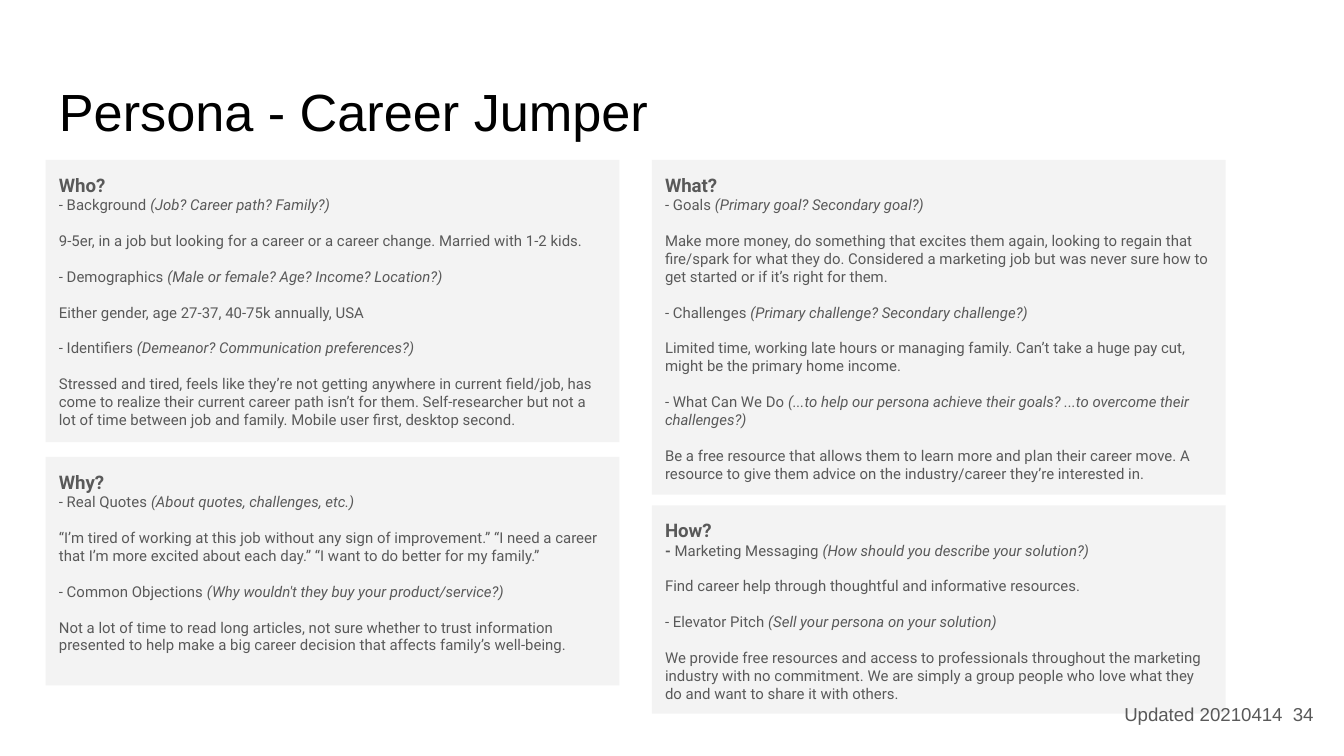
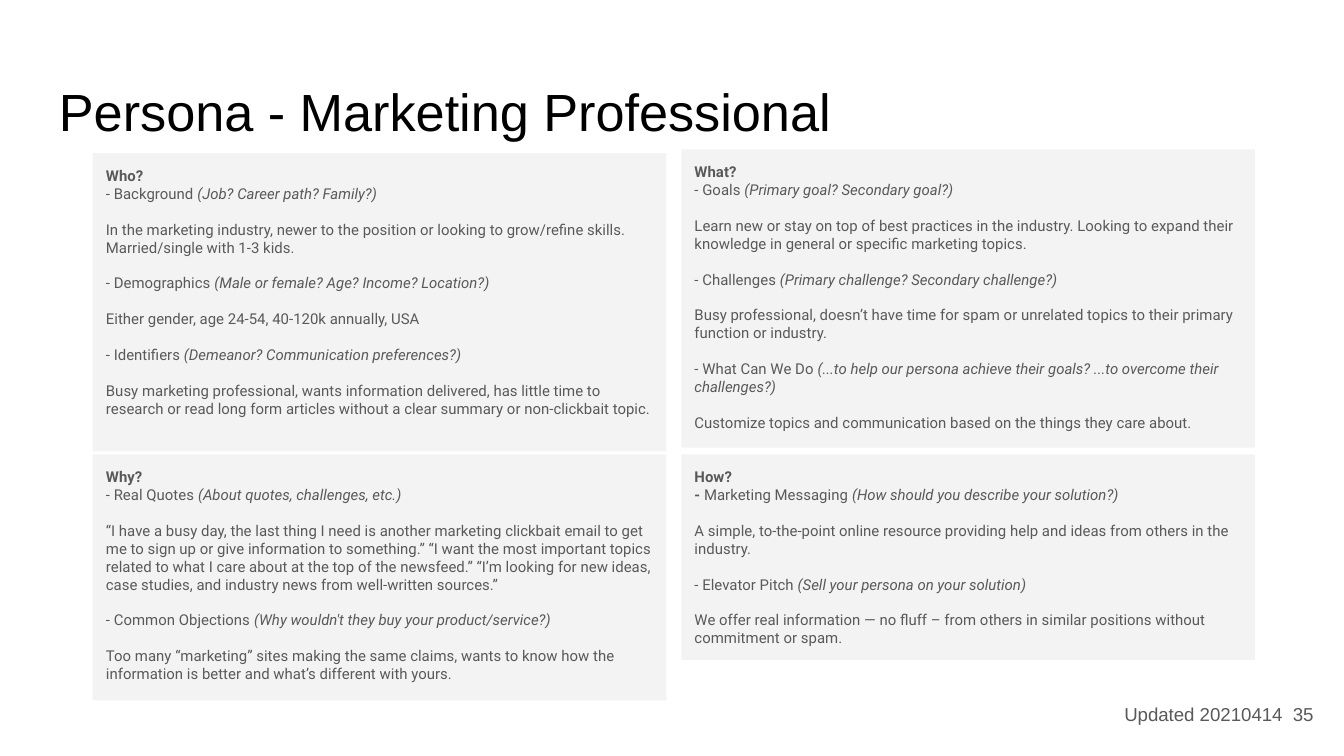
import pptx
import pptx.dml.color
import pptx.enum.shapes
import pptx.enum.text
import pptx.util

Pt = pptx.util.Pt
RGBColor = pptx.dml.color.RGBColor
ANCHOR = pptx.enum.text.MSO_ANCHOR
ALIGN = pptx.enum.text.PP_ALIGN

BLACK = RGBColor(0x00, 0x00, 0x00)
GRAY = RGBColor(0x59, 0x59, 0x59)
PANEL = RGBColor(0xF3, 0xF3, 0xF3)

TITLE_FONT = "Arial"
BODY_FONT = "Roboto"
BODY_SIZE = 8
LINE_GAP = 9.6
INSET = 7.2
PANEL_WIDTH = 307.4

# Questions asked of every persona: (label, hint) per panel
QUESTIONS = {
    "Who?": [
        ("Background", "(Job? Career path? Family?)"),
        ("Demographics", "(Male or female? Age? Income? Location?)"),
        ("Identifiers", "(Demeanor? Communication preferences?)"),
    ],
    "Why?": [
        ("Real Quotes", "(About quotes, challenges, etc.)"),
        ("Common Objections", "(Why wouldn't they buy your product/service?)"),
    ],
    "What?": [
        ("Goals", "(Primary goal? Secondary goal?)"),
        ("Challenges", "(Primary challenge? Secondary challenge?)"),
        ("What Can We Do", "(...to help our persona achieve their goals? "
                           "...to overcome their challenges?)"),
    ],
    "How?": [
        ("Marketing Messaging", "(How should you describe your solution?)"),
        ("Elevator Pitch", "(Sell your persona on your solution)"),
    ],
}

# Each panel: left, top, height and the answers to its questions
CAREER_JUMPER = {
    "Who?": (24.5, 85.7, 151.2, [
        "9-5er, in a job but looking for a career or a career change. "
        "Married with 1-2 kids.",
        "Either gender, age 27-37, 40-75k annually, USA",
        "Stressed and tired, feels like they’re not getting anywhere in current "
        "field/job, has come to realize their current career path isn’t for them. "
        "Self-researcher but not a lot of time between job and family. "
        "Mobile user first, desktop second.",
    ]),
    "Why?": (24.5, 244.8, 122.4, [
        "“I’m tired of working at this job without any sign of improvement.” "
        "“I need a career that I’m more excited about each day.” "
        "“I want to do better for my family.”",
        "Not a lot of time to read long articles, not sure whether to trust "
        "information presented to help make a big career decision that affects "
        "family’s well-being.",
    ]),
    "What?": (349.2, 85.7, 179.3, [
        "Make more money, do something that excites them again, looking to regain "
        "that fire/spark for what they do. Considered a marketing job but was "
        "never sure how to get started or if it’s right for them.",
        "Limited time, working late hours or managing family. Can’t take a huge "
        "pay cut, might be the primary home income.",
        "Be a free resource that allows them to learn more and plan their career "
        "move. A resource to give them advice on the industry/career they’re "
        "interested in.",
    ]),
    "How?": (349.2, 270.7, 111.6, [
        "Find career help through thoughtful and informative resources.",
        "We provide free resources and access to professionals throughout the "
        "marketing industry with no commitment. We are simply a group people who "
        "love what they do and want to share it with others.",
    ]),
}

MARKETING_PROFESSIONAL = {
    "Who?": (49.7, 82, 159.8, [
        "In the marketing industry, newer to the position or looking to "
        "grow/refine skills. Married/single with 1-3 kids.",
        "Either gender, age 24-54, 40-120k annually, USA",
        "Busy marketing professional, wants information delivered, has little "
        "time to research or read long form articles without a clear summary or "
        "non-clickbait topic.",
    ]),
    "Why?": (49.7, 243.4, 131.8, [
        "“I have a busy day, the last thing I need is another marketing clickbait "
        "email to get me to sign up or give information to something.” “I want "
        "the most important topics related to what I care about at the top of the "
        "newsfeed.” “I’m looking for new ideas, case studies, and industry news "
        "from well-written sources.”",
        "Too many “marketing” sites making the same claims, wants to know how the "
        "information is better and what’s different with yours.",
    ]),
    "What?": (365, 80, 159.8, [
        "Learn new or stay on top of best practices in the industry. Looking to "
        "expand their knowledge in general or specific marketing topics.",
        "Busy professional, doesn’t have time for spam or unrelated topics to "
        "their primary function or industry.",
        "Customize topics and communication based on the things they care about.",
    ]),
    "How?": (365, 243.4, 110.2, [
        "A simple, to-the-point online resource providing help and ideas from "
        "others in the industry.",
        "We offer real information — no fluff – from others in similar positions "
        "without commitment or spam.",
    ]),
}


def prepare_frame(sp, anchor=ANCHOR.TOP):
    tf = sp.text_frame
    tf.word_wrap = True
    tf.vertical_anchor = anchor
    tf.margin_left = tf.margin_right = Pt(INSET)
    tf.margin_top = tf.margin_bottom = Pt(INSET)
    return tf


def style_paragraph(p, size, font, color, align=ALIGN.LEFT):
    p.alignment = align
    p.font.size = Pt(size)
    p.font.name = font
    p.font.color.rgb = color


def add_label(slide, box, text, size, color, anchor, align):
    sp = slide.shapes.add_textbox(*map(Pt, box))
    p = prepare_frame(sp, anchor).paragraphs[0]
    p.text = text
    style_paragraph(p, size, TITLE_FONT, color, align)


def add_line(tf, runs, gap):
    """Add a body paragraph of (text, bold, italic) runs."""
    p = tf.add_paragraph()
    style_paragraph(p, BODY_SIZE, BODY_FONT, GRAY)
    p.space_before = Pt(gap)
    for text, bold, italic in runs:
        r = p.add_run()
        r.text = text
        r.font.bold = bold
        r.font.italic = italic


def add_panel(slide, box, heading, heading_size, answers):
    sp = slide.shapes.add_shape(
        pptx.enum.shapes.MSO_SHAPE.RECTANGLE, *map(Pt, box))
    sp.shadow.inherit = False
    sp.fill.solid()
    sp.fill.fore_color.rgb = PANEL
    sp.line.fill.background()

    # Heading
    tf = prepare_frame(sp)
    p = tf.paragraphs[0]
    p.text = heading
    style_paragraph(p, heading_size, BODY_FONT, GRAY)
    p.font.bold = True

    # Questions and answers; the first dash under "How?" is bold
    for i, ((label, hint), answer) in enumerate(zip(QUESTIONS[heading], answers)):
        bold_dash = heading == "How?" and i == 0
        question = [("- ", bold_dash, False), (label + " ", False, False),
                    (hint, False, True)]
        add_line(tf, question, LINE_GAP if i else 0)
        add_line(tf, [(answer, False, False)], LINE_GAP)


def add_persona_slide(prs, name, panels, heading_size, number):
    slide = prs.slides.add_slide(prs.slide_layouts[6])
    add_label(slide, (24.5, 35.3, 671, 45.4), f"Persona - {name}",
              28, BLACK, ANCHOR.TOP, ALIGN.LEFT)
    for heading, (left, top, height, answers) in panels.items():
        add_panel(slide, (left, top, PANEL_WIDTH, height),
                  heading, heading_size, answers)
    add_label(slide, (470.2, 367.2, 240.5, 31), f"Updated 20210414  {number}",
              10, GRAY, ANCHOR.MIDDLE, ALIGN.RIGHT)


def main():
    prs = pptx.Presentation()
    prs.slide_width = Pt(720)
    prs.slide_height = Pt(405)
    add_persona_slide(prs, "Career Jumper", CAREER_JUMPER, 10, 34)
    add_persona_slide(prs, "Marketing Professional", MARKETING_PROFESSIONAL, 8, 35)
    prs.save("out.pptx")


if __name__ == "__main__":
    main()
